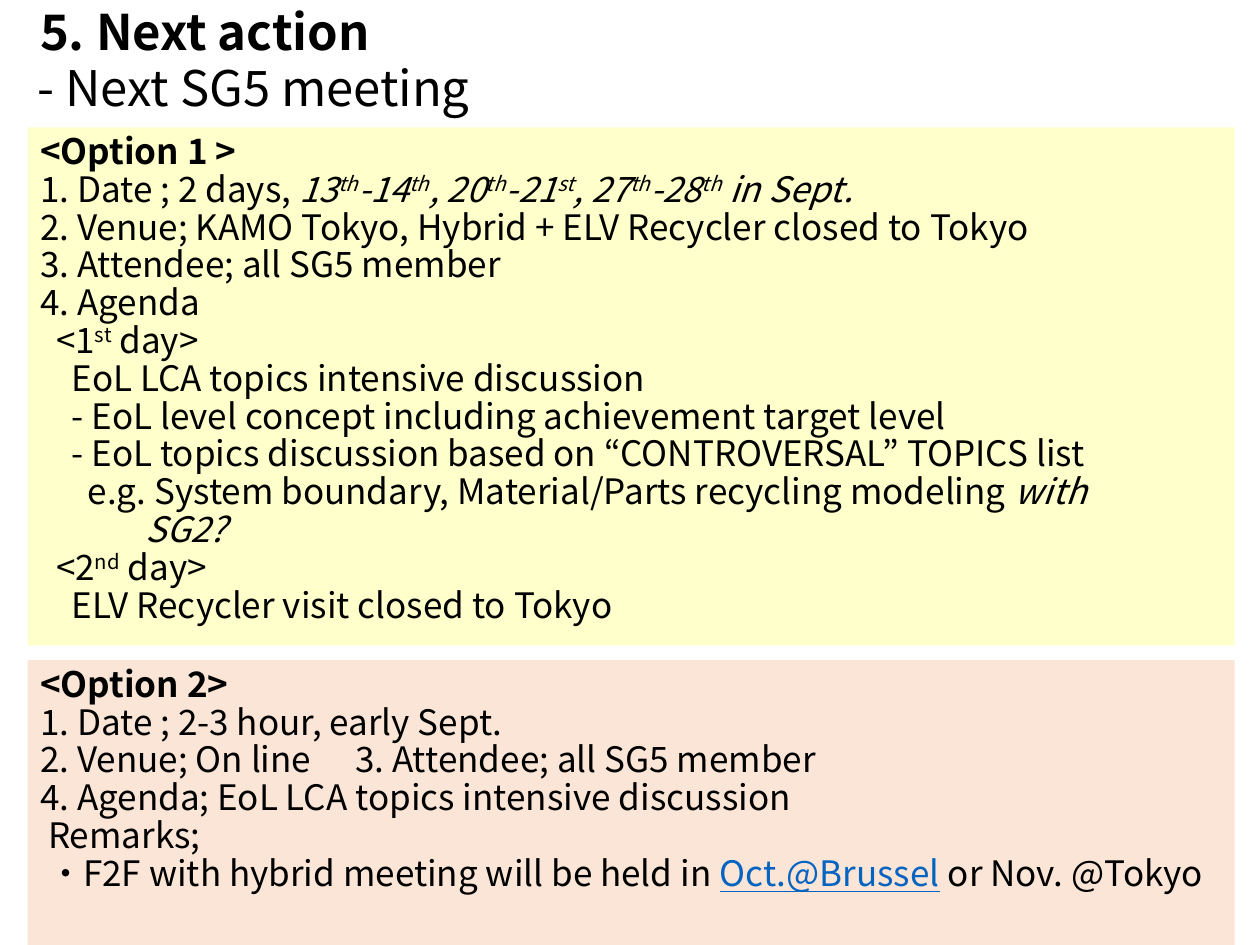
from dataclasses import dataclass

import pptx
import pptx.enum.shapes
import pptx.enum.text
import pptx.oxml.ns
import pptx.slide
import pptx.text.text
import pptx.util
from lxml import etree
from pptx.dml.color import RGBColor
from pptx.util import Cm, Pt

BLACK = RGBColor(0, 0, 0)
BLUE = RGBColor(0x05, 0x63, 0xC1)
CREAM = RGBColor(0xFF, 0xFF, 0xCC)
PEACH = RGBColor(0xFB, 0xE5, 0xD6)
FONT = "Noto Sans CJK JP"
LEAD = 1.2  # line height of the font, in ems
TIGHT = 0.9
STEP = 0.32  # one indent level, in cm
TAB = 6.11


@dataclass(frozen=True)
class Bit:
    text: str
    bold: bool = False
    tilt: bool = False
    high: bool = False
    link: bool = False


@dataclass(frozen=True)
class Line:
    bits: tuple[Bit, ...]
    left: float = 0
    hang: float = 0


@dataclass(frozen=True)
class Box:
    left: float
    top: float
    width: float
    height: float


def plain(text: str, level: float = 0) -> Line:
    return Line((Bit(text),), level * STEP)


def head(text: str) -> Line:
    return Line((Bit(text, bold=True),))


def day(num: str, end: str) -> Line:
    return Line((Bit("<" + num), Bit(end, high=True), Bit(" day>")), STEP)


def dates(*pairs: tuple[str, str]) -> tuple[Bit, ...]:
    """Slanted numbers, each followed by its raised ending."""
    return tuple(
        bit
        for num, end in pairs
        for bit in (Bit(num, tilt=True), Bit(end, tilt=True, high=True))
    )


def write(frame: pptx.text.text.TextFrame, lines: list[Line], size: float,
          tight: float = TIGHT) -> None:
    frame.word_wrap = True
    for num, line in enumerate(lines):
        para = frame.add_paragraph() if num else frame.paragraphs[0]
        para.alignment = pptx.enum.text.PP_ALIGN.LEFT
        para.line_spacing = Pt(size * LEAD * tight)
        props = para._p.get_or_add_pPr()
        props.set("marL", str(Cm(line.left + line.hang)))
        props.set("indent", str(Cm(-line.hang)))
        for bit in line.bits:
            if "\t" in bit.text:
                stops = etree.SubElement(props, pptx.oxml.ns.qn("a:tabLst"))
                etree.SubElement(stops, pptx.oxml.ns.qn("a:tab"),
                                 pos=str(Cm(TAB)), algn="l")
            for row, text in enumerate(bit.text.split("\n")):
                if row:
                    para.add_line_break()
                run = para.add_run()
                run.text = text
                style(run, bit, size)


def style(run: pptx.text.text._Run, bit: Bit, size: float) -> None:
    font = run.font
    font.name = FONT
    font.size = Pt(size)
    font.bold = bit.bold
    font.italic = bit.tilt
    font.underline = bit.link
    font.color.rgb = BLUE if bit.link else BLACK
    props = run._r.get_or_add_rPr()
    etree.SubElement(props, pptx.oxml.ns.qn("a:ea"), typeface=FONT)
    if bit.high:
        props.set("baseline", "30000")


def panel(slide: pptx.slide.Slide, box: Box, fill: RGBColor,
          lines: list[Line]) -> None:
    shape = slide.shapes.add_shape(
        pptx.enum.shapes.MSO_SHAPE.RECTANGLE,
        Cm(box.left), Cm(box.top), Cm(box.width), Cm(box.height))
    shape.shadow.inherit = False
    shape.fill.solid()
    shape.fill.fore_color.rgb = fill
    shape.line.fill.background()
    shape.text_frame.vertical_anchor = pptx.enum.text.MSO_ANCHOR.TOP
    write(shape.text_frame, lines, 20)


def label(slide: pptx.slide.Slide, box: Box, line: Line, tight: float,
          anchor: pptx.enum.text.MSO_ANCHOR) -> None:
    shape = slide.shapes.add_textbox(
        Cm(box.left), Cm(box.top), Cm(box.width), Cm(box.height))
    shape.text_frame.vertical_anchor = anchor
    write(shape.text_frame, [line], 28, tight)


FIRST = [
    head("<Option 1 >"),
    Line((
        Bit("1. Date ; 2 days, "),
        *dates(("13", "th"), ("-14", "th"), (", 20", "th"),
               ("-21", "st"), (", 27", "th"), ("-28", "th")),
        Bit(" in Sept.", tilt=True),
    )),
    plain("2. Venue; KAMO Tokyo, Hybrid + ELV Recycler closed to Tokyo"),
    plain("3. Attendee; all SG5 member"),
    plain("4. Agenda"),
    day("1", "st"),
    plain("EoL LCA topics intensive discussion", 2),
    plain("- EoL level concept including achievement target level", 2),
    plain("- EoL topics discussion based on “CONTROVERSAL” TOPICS list", 2),
    Line((
        Bit("e.g. System boundary, Material/Parts recycling modeling "),
        Bit("with\nSG2?", tilt=True),
    ), 3 * STEP, 1.16),
    day("2", "nd"),
    plain("ELV Recycler visit closed to Tokyo", 2),
]

SECOND = [
    head("<Option 2>"),
    plain("1. Date ; 2-3 hour, early Sept."),
    plain("2. Venue; On line\t3. Attendee; all SG5 member"),
    plain("4. Agenda; EoL LCA topics intensive discussion"),
    plain("Remarks;", 0.5),
    Line((
        Bit("・F2F with hybrid meeting will be held in "),
        Bit("Oct.@Brussel", link=True),
        Bit(" or Nov. @Tokyo"),
    ), STEP / 2),
]


def main() -> None:
    deck = pptx.Presentation()
    deck.slide_width, deck.slide_height = Cm(25.4), Cm(19.05)
    slide = deck.slides.add_slide(deck.slide_layouts[6])
    anchor = pptx.enum.text.MSO_ANCHOR
    panel(slide, Box(0.56, 2.57, 24.33, 10.44), CREAM, FIRST)
    panel(slide, Box(0.56, 13.31, 24.33, 5.74), PEACH, SECOND)
    label(slide, Box(0.56, -0.1, 7.9, 1.45), head("5. Next action"),
          1, anchor.TOP)
    label(slide, Box(0.51, 1.09, 11.53, 1.45), plain("- Next SG5 meeting"),
          TIGHT, anchor.MIDDLE)
    deck.save("out.pptx")


if __name__ == "__main__":
    main()
